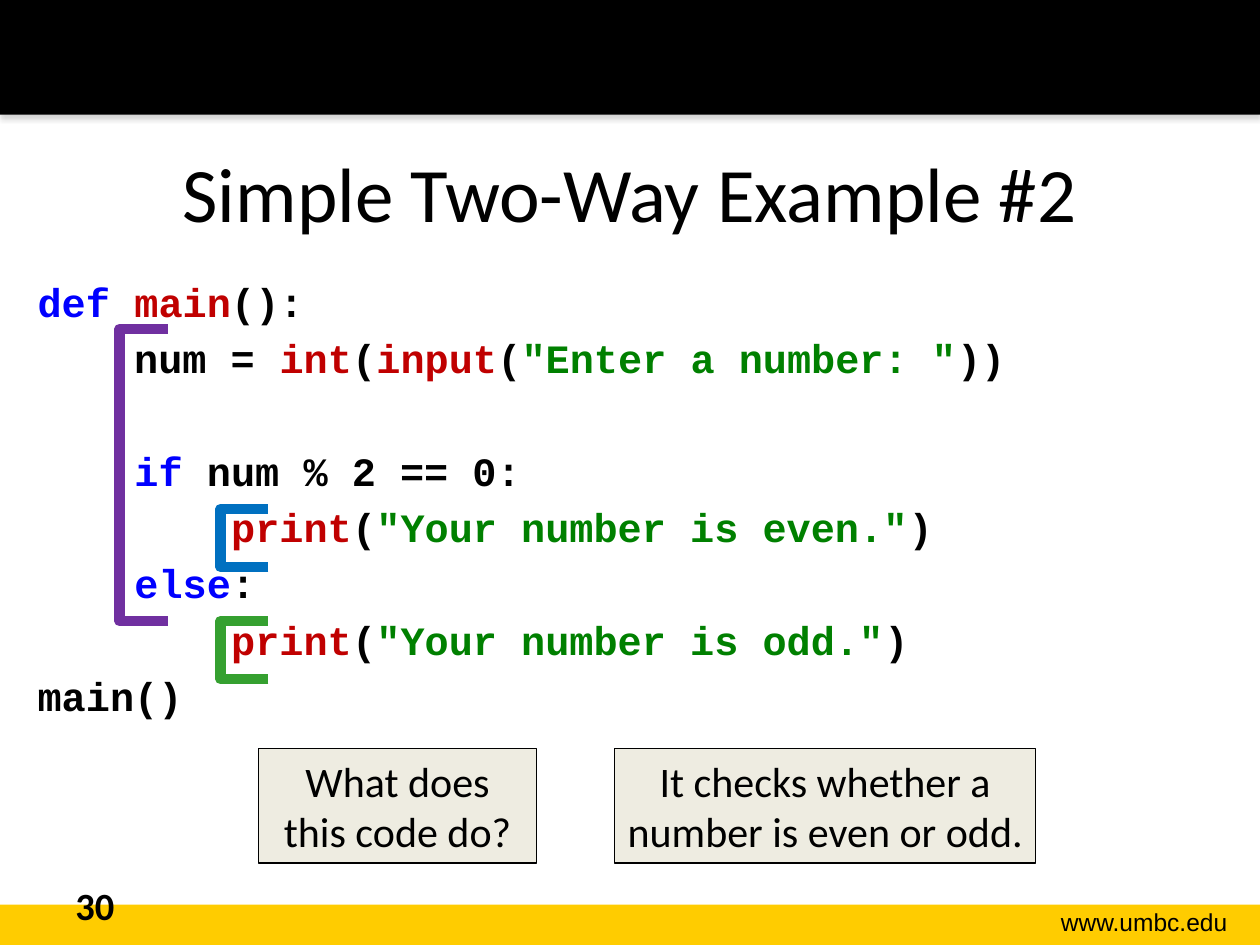
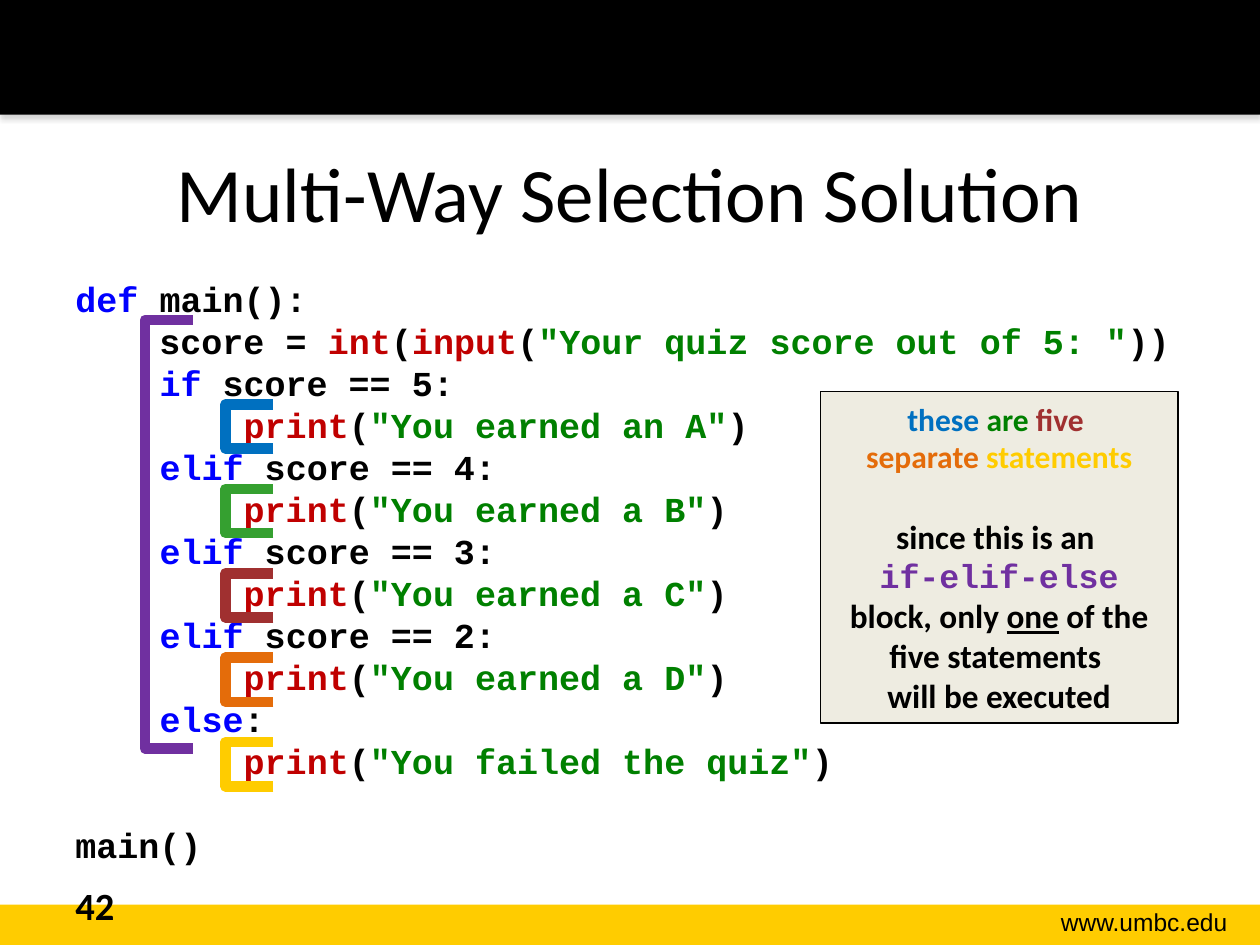
from dataclasses import dataclass

from lxml.etree import SubElement
from pptx import Presentation
from pptx.dml.color import RGBColor
from pptx.enum.shapes import MSO_SHAPE
from pptx.enum.text import MSO_ANCHOR, PP_ALIGN
from pptx.oxml.ns import qn
from pptx.util import Inches, Pt


@dataclass(frozen=True)
class Theme:
    black: str = "000000"
    gold: str = "FFCC00"
    shadow: str = "808080"
    note_fill: str = "EEECE1"
    keyword: str = "0000FF"
    function: str = "C00000"
    string: str = "008000"
    purple: str = "7030A0"
    blue: str = "0070C0"
    green: str = "35A030"
    red: str = "A03030"
    orange: str = "E46C0A"
    heading_font: str = "Calibri"
    code_font: str = "Courier New"
    footer_font: str = "Arial"
    title_size: int = 44
    question_size: int = 24
    number_size: int = 22
    note_size: int = 19
    note_lead_size: int = 18
    footer_size: int = 14
    bracket_weight: float = 6
    outline_weight: float = 0.75


theme = Theme()
KEYWORDS = {"def", "if", "elif", "else"}
FUNCTIONS = {"main", "print", "int", "input"}

presentation = Presentation()
presentation.slide_width = Inches(10)
presentation.slide_height = Inches(7.5)
# The grid has 100 columns and 75 rows.
COLUMN = presentation.slide_width // 100
ROW = presentation.slide_height // 75


def add_box(slide, left, top, width, height, preset=None, fill=None, line=None, weight=0):
    """Place a text box, or a preset shape, on the grid."""
    area = [round(left * COLUMN), round(top * ROW), round(width * COLUMN), round(height * ROW)]
    if preset is None:
        shape = slide.shapes.add_textbox(*area)
    else:
        shape = slide.shapes.add_shape(preset, *area)
        shape.shadow.inherit = False
        if fill:
            shape.fill.solid()
            shape.fill.fore_color.rgb = RGBColor.from_string(fill)
        else:
            shape.fill.background()
        if line:
            shape.line.color.rgb = RGBColor.from_string(line)
            shape.line.width = Pt(weight)
        else:
            shape.line.fill.background()
    shape.text_frame.word_wrap = True
    return shape


def write(paragraph, pieces, size, font=theme.heading_font, bold=False, align=PP_ALIGN.LEFT):
    """Write (text, colour) pieces as runs; a bare "\\v" breaks the line."""
    paragraph.alignment = align
    paragraph.font.size = Pt(size)
    for piece in pieces:
        if piece == "\v":
            paragraph.add_line_break()
            continue
        text, colour = piece
        run = paragraph.add_run()
        run.text = text
        run.font.name = font
        run.font.size = Pt(size)
        run.font.bold = bold
        run.font.color.rgb = RGBColor.from_string(colour)


# Bars in the code part it into pieces that are coloured by what they hold.
even_odd_code = [
    'def |main|():',
    '    num = |int|(|input|(|"Enter a number: "|))',
    '',
    '    |if |num % 2 == 0:',
    '        |print|(|"Your number is even."|)',
    '    |else|:',
    '        |print|(|"Your number is odd."|)',
    'main()',
]
quiz_code = [
    'def |main():',
    '    score = |int|(|input|(|"Your quiz score out of 5: "|))',
    '    |if| score == 5:',
    '        |print|(|"You earned an A"|)',
    '    |elif |score == 4:',
    '        |print|(|"You earned a B"|)',
    '    |elif |score == 3:',
    '        |print|(|"You earned a C"|)',
    '    |elif |score == 2:',
    '        |print|(|"You earned a D"|)',
    '    |else|:',
    '        |print|(|"You failed the quiz"|)',
    '',
    'main()',
]
# Brackets: (left, top, height, colour)
branch_colours = [theme.blue, theme.green, theme.red, theme.orange, theme.gold]
even_odd_brackets = [(9.5, 26.1, 23.2, theme.purple)] + [
    (17.5, 40.4 + 8.9 * index, 4.6, colour) for index, colour in enumerate(branch_colours[:2])
]
quiz_brackets = [(11.5, 25.4, 34, theme.purple)] + [
    (17.9, 32.1 + 6.7 * index, 3.5, colour) for index, colour in enumerate(branch_colours)
]
# Pages: title, number, code, code left, code width, code size, space before, brackets
pages = [
    ("Simple Two-Way Example #2", "30", even_odd_code, 2, 96.9, 23, 4.6, even_odd_brackets),
    ("Multi-Way Selection Solution", "42", quiz_code, 5, 90, 20, 0, quiz_brackets),
]

for title, number, code, code_left, code_width, code_size, space, brackets in pages:
    slide = presentation.slides.add_slide(presentation.slide_layouts[6])

    add_box(slide, 0, 71.8, 100, 3.2, MSO_SHAPE.RECTANGLE, theme.gold)
    top_band = add_box(slide, 0, 0, 100, 9.1, MSO_SHAPE.RECTANGLE, theme.black)
    effects = top_band._element.spPr.find(qn("a:effectLst"))
    shadow = SubElement(effects, qn("a:outerShdw"), blurRad=str(Pt(3.1)), dist=str(Pt(1.8)),
                        dir="5400000", rotWithShape="0")
    shadow_colour = SubElement(shadow, qn("a:srgbClr"), val=theme.shadow)
    SubElement(shadow_colour, qn("a:alpha"), val="35000")

    address = add_box(slide, 78.5, 71.5, 19.9, 3.4)
    write(address.text_frame.paragraphs[0], [("www.umbc.edu", theme.black)],
          theme.footer_size, theme.footer_font, align=PP_ALIGN.RIGHT)
    heading = add_box(slide, 5, 9, 90, 12.5)
    heading.text_frame.vertical_anchor = MSO_ANCHOR.MIDDLE
    write(heading.text_frame.paragraphs[0], [(title, theme.black)],
          theme.title_size, align=PP_ALIGN.CENTER)

    listing = add_box(slide, code_left, 21.5, code_width, 45.5)
    listing.text_frame.text = "\n" * (len(code) - 1)
    for index, (paragraph, line) in enumerate(zip(listing.text_frame.paragraphs, code)):
        pieces = []
        for token in line.split("|") if line else []:
            if token.strip() in KEYWORDS:
                colour = theme.keyword
            elif token in FUNCTIONS:
                colour = theme.function
            elif token.startswith('"'):
                colour = theme.string
            else:
                colour = theme.black
            pieces.append((token, colour))
        write(paragraph, pieces, code_size, theme.code_font, bold=True)
        paragraph.space_before = Pt(space if index else 0)

    page_number = add_box(slide, 5, 69.5, 23.3, 4)
    write(page_number.text_frame.paragraphs[0], [(number, theme.black)],
          theme.number_size, bold=True)

    for left, top, height, colour in brackets:
        bracket = add_box(slide, left, top, 3.8, height, MSO_SHAPE.LEFT_BRACKET,
                          line=colour, weight=theme.bracket_weight)
        bracket.adjustments[0] = 0

even_odd_slide, quiz_slide = presentation.slides

for left, width, text in [
    (20.5, 22.1, "What does this code do?"),
    (48.8, 33.4, "It checks whether a number is even or odd."),
]:
    callout = add_box(even_odd_slide, left, 59.4, width, 9.1, MSO_SHAPE.RECTANGLE,
                      theme.note_fill, theme.black, theme.outline_weight)
    write(callout.text_frame.paragraphs[0], [(text, theme.black)],
          theme.question_size, align=PP_ALIGN.CENTER)

note = add_box(quiz_slide, 65.1, 31.1, 28.4, 26.3, MSO_SHAPE.RECTANGLE,
               theme.note_fill, theme.black, theme.outline_weight)
lead = note.text_frame.paragraphs[0]
write(lead, [("these ", theme.blue), ("are ", theme.string), ("five ", theme.red), "\v",
             ("separate ", theme.orange), ("statements", theme.gold)],
      theme.note_lead_size, bold=True, align=PP_ALIGN.CENTER)
reason = note.text_frame.add_paragraph()
write(reason, [("since this is an ", theme.black), "\v", ("if-elif-else ", theme.purple),
               ("block, only ", theme.black), ("one", theme.black),
               (" of the five statements ", theme.black), "\v",
               ("will be executed", theme.black)],
      theme.note_size, bold=True, align=PP_ALIGN.CENTER)
reason.space_before = Pt(1.22 * theme.note_size)
reason.runs[1].font.name = theme.code_font
reason.runs[3].font.underline = True

presentation.save("out.pptx")
